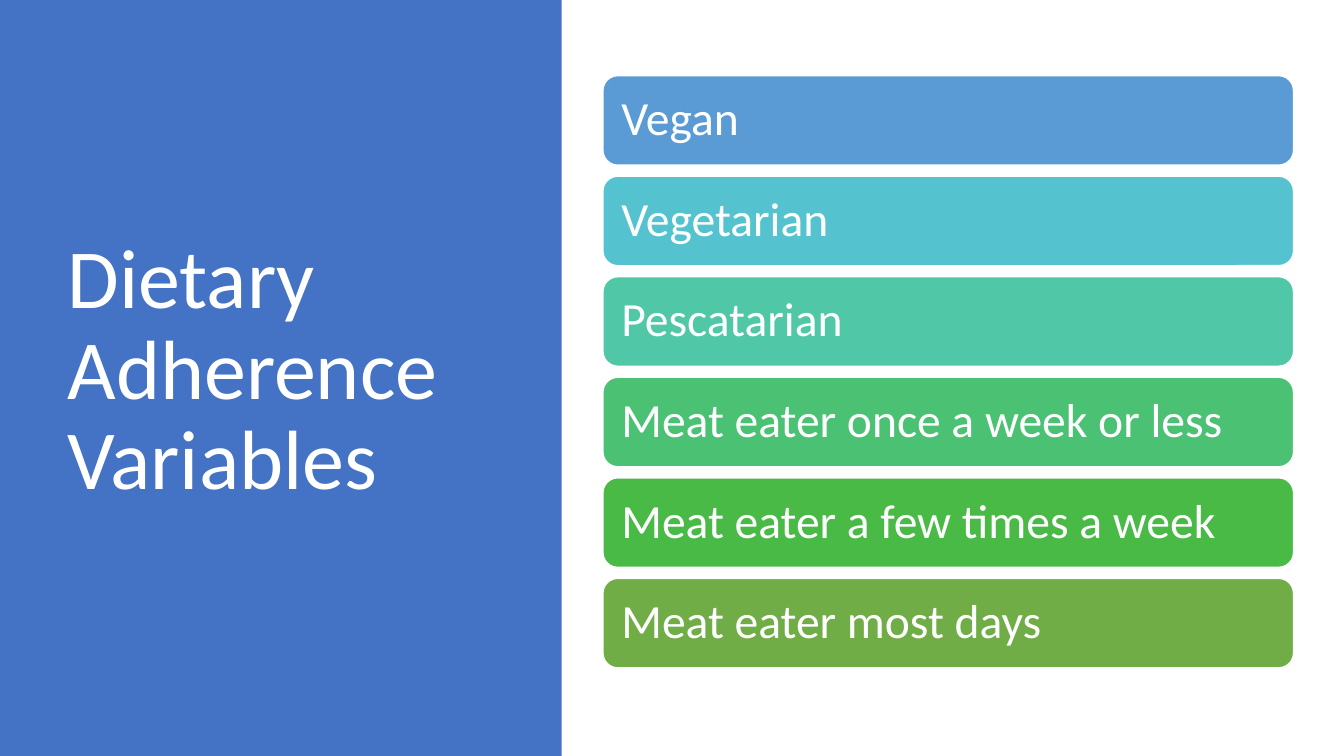
from typing import NamedTuple

from pptx import Presentation
from pptx.dml.color import RGBColor
from pptx.enum.shapes import MSO_SHAPE
from pptx.enum.text import MSO_ANCHOR, PP_ALIGN
from pptx.util import Inches, Pt

WHITE = "FFFFFF"
PANEL_BLUE = "4472C4"
SLIDE_WIDTH, SLIDE_HEIGHT = Inches(13.33), Inches(7.5)

# Bar column, in percent of the slide's size
BAR_LEFT, BAR_WIDTH = 44.86, 51.39
FIRST_ROW, ROW_STEP, BAR_HEIGHT = 10, 13.3, 11.85


class Area(NamedTuple):
    """A rectangle in percent of the slide's width and height."""
    left: float
    top: float
    width: float
    height: float

    def lengths(self) -> tuple[int, int, int, int]:
        return (
            int(SLIDE_WIDTH * self.left / 100),
            int(SLIDE_HEIGHT * self.top / 100),
            int(SLIDE_WIDTH * self.width / 100),
            int(SLIDE_HEIGHT * self.height / 100),
        )


class Diet(NamedTuple):
    label: str
    fill: str


DIETS = [
    Diet("Vegan", "5B9BD5"),
    Diet("Vegetarian", "55C3CF"),
    Diet("Pescatarian", "50C8A7"),
    Diet("Meat eater once a week or less", "4BC174"),
    Diet("Meat eater a few times a week", "4ABA46"),
    Diet("Meat eater most days", "70AD47"),
]


def color(value: str) -> RGBColor:
    return RGBColor.from_string(value)


def set_all(target, formats: dict) -> None:
    for name, value in formats.items():
        setattr(target, name, value)


def write(shape, text: str, size: float, margins: dict) -> None:
    frame = shape.text_frame
    set_all(frame, {"word_wrap": True, "vertical_anchor": MSO_ANCHOR.MIDDLE, **margins})
    para = frame.paragraphs[0]
    set_all(para, {"alignment": PP_ALIGN.LEFT, "line_spacing": 0.9})
    span = para.add_run()
    span.text = text
    set_all(span.font, {"name": "Calibri", "size": Pt(size)})
    span.font.color.rgb = color(WHITE)


def add_block(page, kind: MSO_SHAPE, area: Area, fill: str):
    block = page.shapes.add_shape(kind, *area.lengths())
    block.shadow.inherit = False
    block.fill.solid()
    block.fill.fore_color.rgb = color(fill)
    block.line.fill.background()
    return block


def add_diet_bar(page, row: int, diet: Diet) -> None:
    area = Area(BAR_LEFT, FIRST_ROW + row * ROW_STEP, BAR_WIDTH, BAR_HEIGHT)
    bar = add_block(page, MSO_SHAPE.ROUNDED_RECTANGLE, area, diet.fill)
    bar.line.color.rgb = color(WHITE)
    bar.line.width = Pt(1)
    sides = ("left", "top", "right", "bottom")
    write(bar, diet.label, 34, {f"margin_{side}": Inches(0.14) for side in sides})


def main() -> None:
    deck = Presentation()
    set_all(deck, {"slide_width": SLIDE_WIDTH, "slide_height": SLIDE_HEIGHT})
    page = deck.slides.add_slide(deck.slide_layouts[6])

    # Title panel
    add_block(page, MSO_SHAPE.RECTANGLE, Area(0, 0, 41.79, 100), PANEL_BLUE)
    box = page.shapes.add_textbox(*Area(4.28, 9.07, 31.21, 80.27).lengths())
    write(box, "Dietary Adherence Variables", 60, {})

    # Diet bars
    for row, diet in enumerate(DIETS):
        add_diet_bar(page, row, diet)

    deck.save("out.pptx")


if __name__ == "__main__":
    main()
